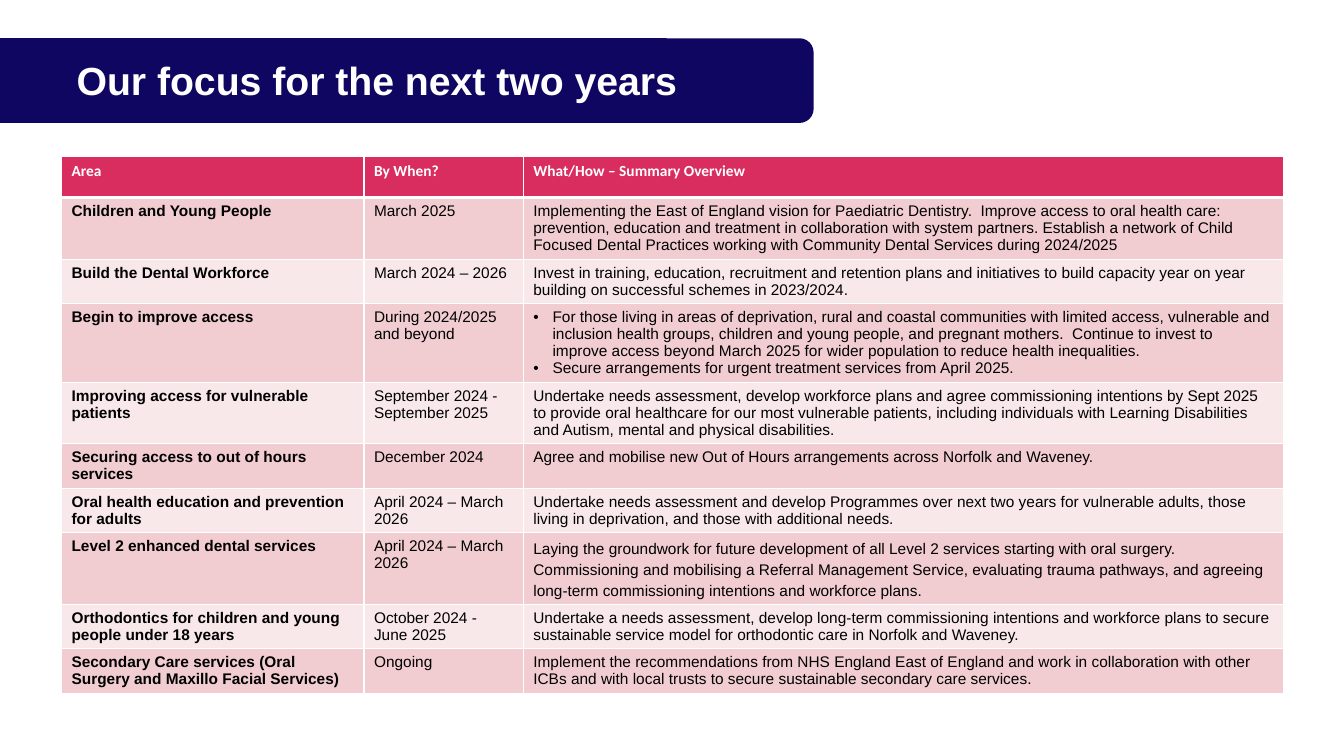
from lxml import etree
from pptx import Presentation
from pptx.dml.color import RGBColor
from pptx.enum.shapes import MSO_SHAPE
from pptx.enum.text import MSO_ANCHOR, MSO_AUTO_SIZE, PP_ALIGN
from pptx.oxml.ns import qn
from pptx.util import Inches, Pt

ROUNDED = MSO_SHAPE.ROUNDED_RECTANGLE
MIDDLE = MSO_ANCHOR.MIDDLE
LEFT = PP_ALIGN.LEFT
NO_FIT = MSO_AUTO_SIZE.NONE

NAVY, PINK, WHITE, BLACK = "0E0661", "D92D5F", "FFFFFF", "000000"
BANDS = ["F1CDD2", "F8E8EA"]
COLUMN_WIDTHS = [3, 1.58, 7.54]
ROW_HEIGHT, SPACED_ROW_HEIGHT = 0.41, 0.45
BULLET_INDENT = 0.19
SPACED_AREA = "Level 2 enhanced dental services"

HEADINGS = ["Area", "By When?", "What/How – Summary Overview"]
PLANS = [
    ("Children and Young People", "March 2025",
     ["Implementing the East of England vision for Paediatric Dentistry.  Improve access to oral "
      "health care: prevention, education and treatment in collaboration with system partners. "
      "Establish a network of Child Focused Dental Practices working with Community Dental "
      "Services during 2024/2025"]),
    ("Build the Dental Workforce", "March 2024 – 2026",
     ["Invest in training, education, recruitment and retention plans and initiatives to build "
      "capacity year on year building on successful schemes in 2023/2024."]),
    ("Begin to improve access", "During 2024/2025 and beyond",
     ["For those living in areas of deprivation, rural and coastal communities with limited "
      "access, vulnerable and inclusion health groups, children and young people, and pregnant "
      "mothers.  Continue to invest to improve access beyond March 2025 for wider population to "
      "reduce health inequalities.",
      "Secure arrangements for urgent treatment services from April 2025."]),
    ("Improving access for vulnerable patients", "September 2024 - September 2025",
     ["Undertake needs assessment, develop workforce plans and agree commissioning intentions by "
      "Sept 2025 to provide oral healthcare for our most vulnerable patients, including "
      "individuals with Learning Disabilities and Autism, mental and physical disabilities."]),
    ("Securing access to out of hours services", "December 2024",
     ["Agree and mobilise new Out of Hours arrangements across Norfolk and Waveney."]),
    ("Oral health education and prevention for adults", "April 2024 – March 2026",
     ["Undertake needs assessment and develop Programmes over next two years for vulnerable "
      "adults, those living in deprivation, and those with additional needs."]),
    (SPACED_AREA, "April 2024 – March 2026",
     ["Laying the groundwork for future development of all Level 2 services starting with oral "
      "surgery. Commissioning and mobilising a Referral Management Service, evaluating trauma "
      "pathways, and agreeing long-term commissioning intentions and workforce plans."]),
    ("Orthodontics for children and young people under 18 years", "October 2024 - June 2025",
     ["Undertake a needs assessment, develop long-term commissioning intentions and workforce "
      "plans to secure sustainable service model for orthodontic care in Norfolk and Waveney."]),
    ("Secondary Care services (Oral Surgery and Maxillo Facial Services)", "Ongoing",
     ["Implement the recommendations from NHS England East of England and work in collaboration "
      "with other ICBs and with local trusts to secure sustainable secondary care services."]),
]


def colour(value):
    return RGBColor.from_string(value)


class SlideBuilder:
    def __init__(self, page, font="Arial", size=11):
        self.page = page
        self.font = font
        self.size = size

    def add_span(self, para, text, ink=BLACK, bold=False, font=None, size=None):
        span = para.add_run()
        span.text = text
        span.font.name = font or self.font
        span.font.size = Pt(size or self.size)
        span.font.bold = bold
        span.font.color.rgb = colour(ink)

    def title(self, text, left, top, width, height):
        box = self.page.shapes.title
        box.left, box.top = Inches(left), Inches(top)
        box.width, box.height = Inches(width), Inches(height)
        frame = box.text_frame
        frame.word_wrap = True
        frame.auto_size = NO_FIT
        frame.vertical_anchor = MIDDLE
        para = frame.paragraphs[0]
        para.alignment = LEFT
        para.line_spacing = 0.9
        para.space_before = Pt(0)
        self.add_span(para, text, WHITE, True, size=28)

    def banner(self, left, top, width, height):
        shape = self.page.shapes.add_shape(
            ROUNDED, Inches(left), Inches(top), Inches(width), Inches(height))
        shape.shadow.inherit = False
        shape.fill.solid()
        shape.fill.fore_color.rgb = colour(NAVY)
        shape.line.fill.background()
        self.page.shapes.title.element.addprevious(shape.element)

    def bullet(self, para):
        properties = para._p.get_or_add_pPr()
        properties.set("marL", str(Inches(BULLET_INDENT)))
        properties.set("indent", str(-Inches(BULLET_INDENT)))
        etree.SubElement(properties, qn("a:buFont")).set("typeface", "Arial")
        etree.SubElement(properties, qn("a:buChar")).set("char", "•")

    def borders(self, cell, top=1, bottom=1):
        properties = cell._tc.get_or_add_tcPr()
        widths = {"a:lnL": 1, "a:lnR": 1, "a:lnT": top, "a:lnB": bottom}
        for position, (side, width) in enumerate(widths.items()):
            line = etree.Element(qn(side), w=str(Pt(width)))
            fill = etree.SubElement(line, qn("a:solidFill"))
            etree.SubElement(fill, qn("a:srgbClr")).set("val", WHITE)
            properties.insert(position, line)

    def cell(self, cell, texts, fill, top=1, bottom=1, spacing=None, **style):
        cell.fill.solid()
        cell.fill.fore_color.rgb = colour(fill)
        self.borders(cell, top, bottom)
        frame = cell.text_frame
        for index, text in enumerate(texts):
            para = frame.add_paragraph() if index else frame.paragraphs[0]
            if spacing:
                para.line_spacing = spacing
            if len(texts) > 1:
                self.bullet(para)
            self.add_span(para, text, **style)

    def table(self, left, top, width, height):
        holder = self.page.shapes.add_table(
            len(PLANS) + 1, len(HEADINGS),
            Inches(left), Inches(top), Inches(width), Inches(height))
        grid = holder.table
        for column, column_width in zip(grid.columns, COLUMN_WIDTHS):
            column.width = Inches(column_width)
        for row in grid.rows:
            row.height = Inches(ROW_HEIGHT)
        for index, heading in enumerate(HEADINGS):
            self.cell(grid.cell(0, index), [heading], PINK, bottom=3,
                      ink=WHITE, bold=True, font="Calibri")
        for number, (area, when, summary) in enumerate(PLANS, 1):
            fill = BANDS[(number - 1) % 2]
            edge = 3 if number == 1 else 1
            spacing = None
            if area == SPACED_AREA:
                spacing = 1.2
                grid.rows[number].height = Inches(SPACED_ROW_HEIGHT)
            self.cell(grid.cell(number, 0), [area], fill, edge, bold=True)
            self.cell(grid.cell(number, 1), [when], fill, edge)
            self.cell(grid.cell(number, 2), summary, fill, edge, spacing=spacing)
        holder.height = Inches(height)


def main():
    deck = Presentation()
    deck.slide_width, deck.slide_height = Inches(13.33), Inches(7.5)
    builder = SlideBuilder(deck.slides.add_slide(deck.slide_layouts[5]))
    builder.title("Our focus for the next two years", 0.66, 0.54, 7.32, 0.56)
    builder.banner(-0.3, 0.38, 8.37, 0.84)
    builder.table(0.61, 1.55, 12.12, 5.61)
    deck.save("out.pptx")


if __name__ == "__main__":
    main()
